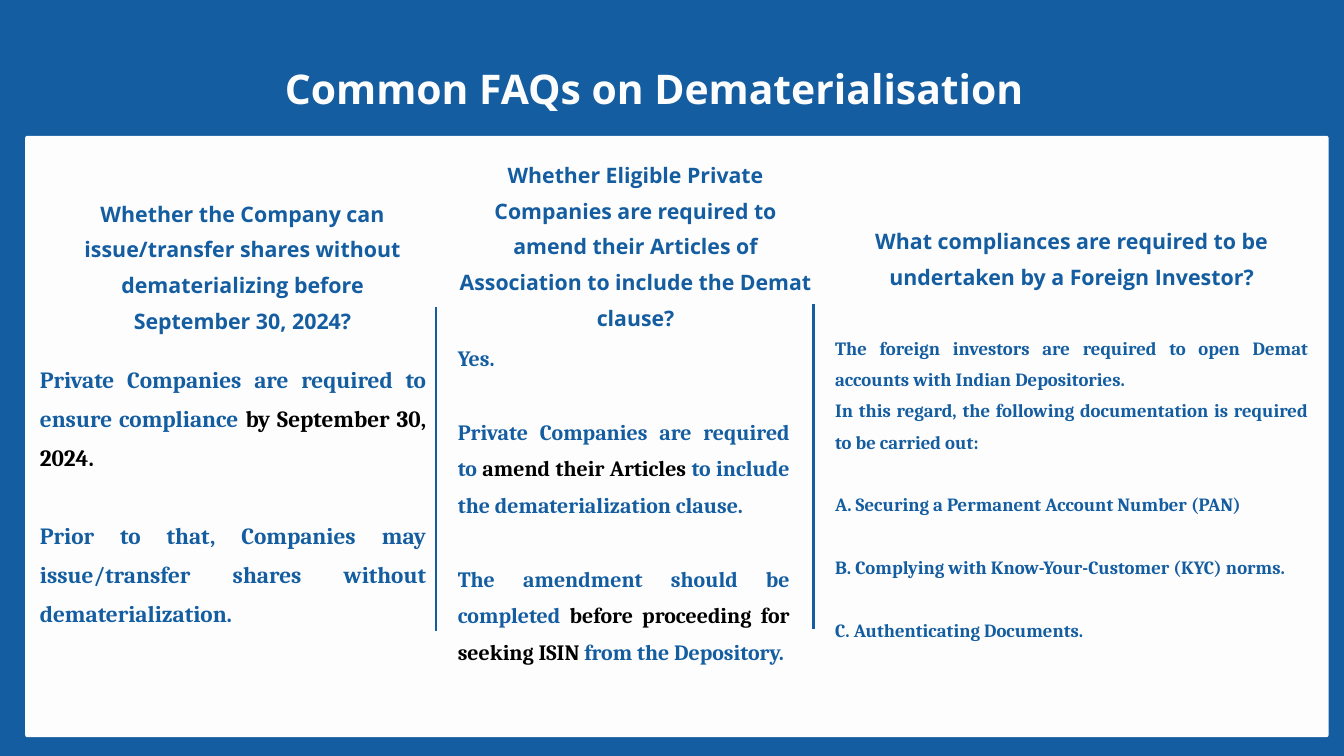
from pptx import Presentation
from pptx.dml.color import RGBColor
from pptx.enum.shapes import MSO_CONNECTOR as Connector, MSO_SHAPE as Shape
from pptx.enum.text import PP_ALIGN as Align
from pptx.oxml.ns import qn
from pptx.util import Emu, Pt
from lxml.etree import SubElement

BLUE = RGBColor(0x14, 0x5D, 0xA0)
WHITE = RGBColor(0xFD, 0xFD, 0xFD)
BLACK = RGBColor(0, 0, 0)
HEADING_FONT = "Open Sans"
BODY_FONT = "Cambria"
LINE_SPACING = 1.4
BLANK_LINE = 1.2 * LINE_SPACING


def px(length):
    return Emu(length * 9525)


class FaqSlide:
    def __init__(self, deck):
        self.slide = deck.slides.add_slide(deck.slide_layouts[6])
        background = self.slide.background.fill
        background.solid()
        background.fore_color.rgb = BLUE

    def panel(self, left, top, width, height, radius):
        panel = self.slide.shapes.add_shape(
            Shape.ROUNDED_RECTANGLE, *map(px, (left, top, width, height)))
        panel.adjustments[0] = radius / min(width, height)
        panel.shadow.inherit = False
        panel.fill.solid()
        panel.fill.fore_color.rgb = WHITE
        panel.line.fill.background()

    def divider(self, x, top, bottom):
        divider = self.slide.shapes.add_connector(
            Connector.STRAIGHT, *map(px, (x, top, x, bottom)))
        divider.line.color.rgb = BLUE
        divider.line.width = Pt(3)
        SubElement(divider._element.spPr, qn("a:effectLst"))

    def text_frame(self, box):
        frame = self.slide.shapes.add_textbox(*map(px, box)).text_frame
        frame.word_wrap = True
        frame.margin_left = frame.margin_right = 0
        frame.margin_top = frame.margin_bottom = 0
        return frame

    def style(self, paragraph, font, size, color, align):
        paragraph.alignment = align
        paragraph.line_spacing = LINE_SPACING
        paragraph.font.name = font
        paragraph.font.size = Pt(size)
        paragraph.font.bold = True
        paragraph.font.color.rgb = color

    def heading(self, box, text, size, color=BLUE, align=Align.CENTER):
        paragraph = self.text_frame(box).paragraphs[0]
        paragraph.text = text
        self.style(paragraph, HEADING_FONT, size, color, align)

    def answer(self, box, size, blocks):
        frame = self.text_frame(box)
        paragraph = None
        for block in blocks:
            for position, (plain, *rest) in enumerate(block):
                first = paragraph is None
                paragraph = frame.paragraphs[0] if first else frame.add_paragraph()
                self.style(paragraph, BODY_FONT, size, BLUE, Align.JUSTIFY)
                if position == 0 and not first:
                    paragraph.space_before = Pt(round(size * BLANK_LINE, 1))
                for index, words in enumerate((plain, *rest)):
                    run = paragraph.add_run()
                    run.text = words
                    if index == 1:
                        run.font.color.rgb = BLACK


def main():
    deck = Presentation()
    deck.slide_width, deck.slide_height = px(1920), px(1080)
    faq = FaqSlide(deck)

    faq.panel(36, 194, 1862, 859, radius=3)
    faq.divider(623, 439, 902)
    faq.divider(1162, 435, 899)
    faq.heading((407, 63, 1095, 79), "Common FAQs on Dematerialisation",
                43.8, WHITE, Align.LEFT)

    faq.heading((108, 272, 477, 167),
                "Whether the Company can issue/transfer shares without "
                "dematerializing before September 30, 2024?", 22.9)
    faq.answer((57, 506, 552, 322), 24.9, [
        [("Private Companies are required to ensure compliance ",
          "by September 30, 2024.")],
        [("Prior to that, Companies may issue/transfer shares without "
          "dematerialization.",)],
    ])

    faq.heading((654, 217, 508, 210),
                "Whether Eligible Private Companies are required to amend their "
                "Articles of Association to include the Demat clause?", 22.8)
    faq.answer((654, 478, 474, 386), 23.4, [
        [("Yes.",)],
        [("Private Companies are required to ", "amend their Articles",
          " to include the dematerialization clause.")],
        [("The amendment should be completed ",
          "before proceeding for seeking ISIN ", "from the Depository.")],
    ])

    faq.heading((1193, 311, 676, 82),
                "What compliances are required to be undertaken by a "
                "Foreign Investor?", 22.9)
    faq.answer((1193, 468, 676, 515), 20, [
        [("The foreign investors are required to open Demat accounts with "
          "Indian Depositories.",),
         ("In this regard, the following documentation is required to be "
          "carried out:",)],
        [("A. Securing a Permanent Account Number (PAN)",)],
        [("B. Complying with Know-Your-Customer (KYC) norms.",)],
        [("C. Authenticating Documents.",)],
    ])

    deck.save("out.pptx")


if __name__ == "__main__":
    main()
